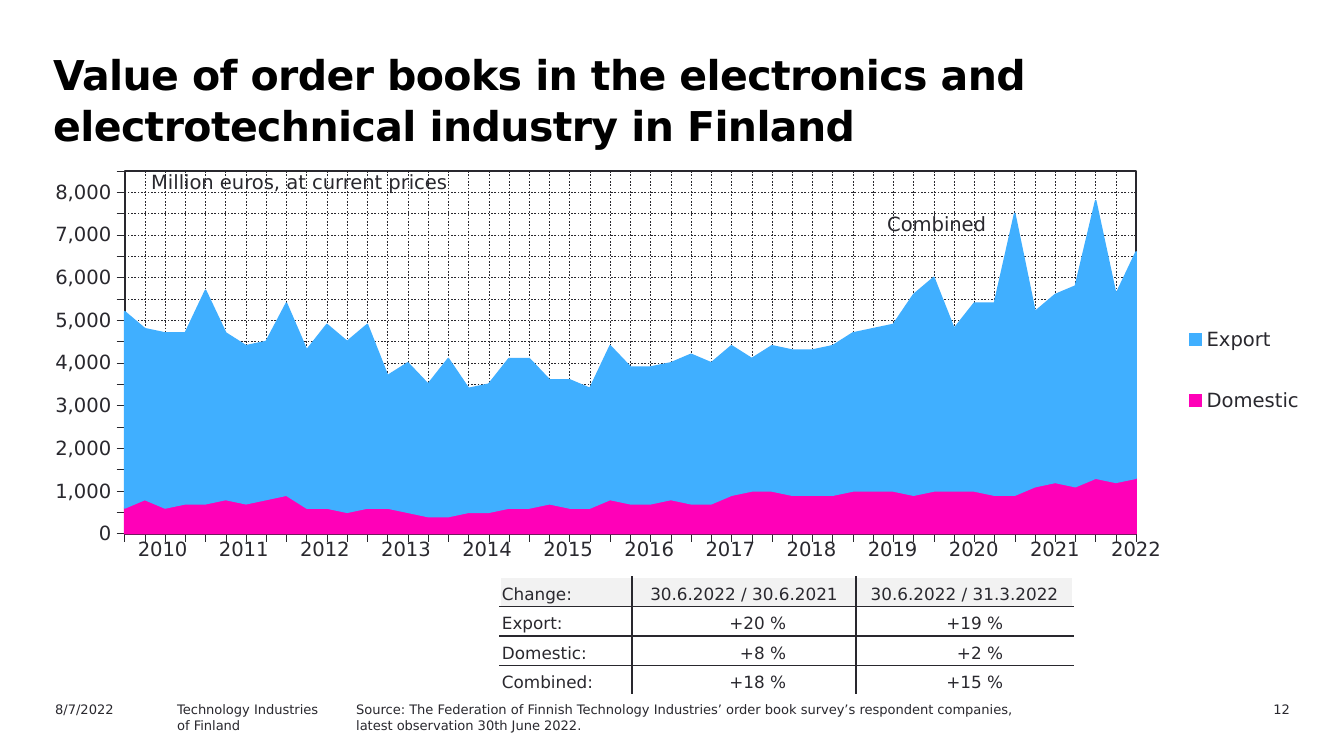
from lxml.etree import SubElement
from pptx import Presentation
from pptx.chart.data import CategoryChartData
from pptx.dml.color import RGBColor
from pptx.enum.chart import XL_CHART_TYPE, XL_LEGEND_POSITION, XL_TICK_LABEL_POSITION, XL_TICK_MARK
from pptx.enum.dml import MSO_LINE
from pptx.enum.text import MSO_ANCHOR, PP_ALIGN as Align
from pptx.oxml import parse_xml
from pptx.oxml.ns import nsdecls, qn
from pptx.util import Emu, Pt

# Content
TITLE = "Value of order books in the electronics and electrotechnical industry in Finland"
SOURCE = ("Source: The Federation of Finnish Technology Industries’ order book survey’s "
          "respondent companies, latest observation 30th June 2022.")
# lines, (left, top, width, height) in px, size, alignment, wrap
LABELS = [
    (["Million euros, at current prices"], (138, 163, 328, 36), 10.5, Align.LEFT, False),
    (["Combined"], (874, 205, 142, 36), 10.5, Align.LEFT, True),
    (["8/7/2022"], (42, 695, 134, 24), 7, Align.LEFT, True),
    (["Technology Industries", "of Finland"], (164, 695, 242, 24), 7, Align.LEFT, True),
    ([SOURCE], (343, 695, 710, 35), 7, Align.LEFT, True),
    (["12"], (1177, 695, 126, 24), 7, Align.RIGHT, True),
]
DOMESTIC = [
    600, 800, 600, 700, 700, 800, 700, 800, 900, 600, 600, 500, 600, 600, 500, 400, 400,
    500, 500, 600, 600, 700, 600, 600, 800, 700, 700, 800, 700, 700, 900, 1000, 1000, 900,
    900, 900, 1000, 1000, 1000, 900, 1000, 1000, 1000, 900, 900, 1100, 1200, 1100, 1300,
    1200, 1300]
EXPORT = [
    4600, 4000, 4100, 4000, 5000, 3900, 3700, 3700, 4500, 3700, 4300, 4000, 4300, 3100,
    3500, 3100, 3700, 2900, 3000, 3500, 3500, 2900, 3000, 2800, 3600, 3200, 3200, 3200,
    3500, 3300, 3500, 3100, 3400, 3400, 3400, 3500, 3700, 3800, 3900, 4700, 5000, 3800,
    4400, 4500, 6600, 4100, 4400, 4700, 6500, 4400, 5300]
YEARS = [str(year) for year in range(2010, 2023)]
CHANGES = [
    ["Change:", "30.6.2022 / 30.6.2021", "30.6.2022 / 31.3.2022"],
    ["Export:", "+20 %", "+19 %"],
    ["Domestic:", "+8 %", "+2 %"],
    ["Combined:", "+18 %", "+15 %"],
]

# Style
FONT = "DejaVu Sans"
BLACK = RGBColor(0x00, 0x00, 0x00)
INK = RGBColor(0x29, 0x28, 0x2E)
WHITE = RGBColor(0xFF, 0xFF, 0xFF)
GREY = RGBColor(0xF2, 0xF2, 0xF2)
PINK = RGBColor(0xFF, 0x00, 0xB8)
BLUE = RGBColor(0x40, 0xAF, 0xFF)
PLAIN_TABLE = "{2D5ABB26-0587-4C30-8999-92F81FD0307C}"


def px(value):
    return Emu(round(value * 914400 / 134.4))


def style_font(font, size, color=INK, bold=False):
    font.name, font.size, font.bold = FONT, Pt(size), bold
    font.color.rgb = color


def write(paragraph, text, size, align=Align.LEFT, color=INK, bold=False):
    paragraph.alignment = align
    run = paragraph.add_run()
    run.text = text
    style_font(run.font, size, color, bold)
    return run


def add_text(slide, lines, box, size, align=Align.LEFT, wrap=True):
    frame = slide.shapes.add_textbox(*map(px, box)).text_frame
    frame.word_wrap = wrap
    for index, line in enumerate(lines):
        paragraph = frame.add_paragraph() if index else frame.paragraphs[0]
        write(paragraph, line, size, align)
    return frame


def add_plain_table(slide, rows, left, top, widths, height):
    shape = slide.shapes.add_table(len(rows), len(widths), px(left), px(top),
                                   px(sum(widths)), px(height))
    table = shape.table
    table.first_row = table.horz_banding = False
    shape._element.find(".//" + qn("a:tableStyleId")).text = PLAIN_TABLE
    for column, width in zip(table.columns, widths):
        column.width = px(width)
    for row in table.rows:
        row.height = px(height / len(rows))
    return table


def set_borders(cell, colors):
    properties = cell._tc.get_or_add_tcPr()
    for index, (side, color) in enumerate(zip("LRTB", colors)):
        properties.insert(index, parse_xml(
            f'<a:ln{side} {nsdecls("a")} w="12700"><a:solidFill>'
            f'<a:srgbClr val="{color}"/></a:solidFill></a:ln{side}>'))


def set_layout(parent, position, inner=False):
    """Place a chart part by fractions of the chart: x, y, width, height."""
    for old in parent.findall(qn("c:layout")):
        parent.remove(old)
    layout = parse_xml(f'<c:layout {nsdecls("c")}><c:manualLayout/></c:layout>')
    manual = layout[0]
    if inner:
        SubElement(manual, qn("c:layoutTarget")).set("val", "inner")
    for name in ("xMode", "yMode"):
        SubElement(manual, qn(f"c:{name}")).set("val", "edge")
    for name, value in zip("xywh", position):
        SubElement(manual, qn(f"c:{name}")).set("val", str(value))
    parent.insert(0 if inner else 1, layout)


def style_axis(axis):
    axis.major_tick_mark = XL_TICK_MARK.OUTSIDE
    axis.minor_tick_mark = XL_TICK_MARK.NONE
    axis.format.line.color.rgb = INK
    axis.format.line.width = Pt(0.22)
    axis.has_major_gridlines = True
    grid = axis.major_gridlines.format.line
    grid.color.rgb, grid.width, grid.dash_style = INK, Pt(0.25), MSO_LINE.DASH


def add_order_chart(slide):
    data = CategoryChartData(number_format="#,##0")
    data.categories = [str(quarter + 1) for quarter in range(len(EXPORT))]
    data.add_series("Domestic", DOMESTIC)
    data.add_series("Export", EXPORT)
    chart = slide.shapes.add_chart(XL_CHART_TYPE.AREA_STACKED, px(27), px(159),
                                   px(1302), px(410), data).chart
    style_font(chart.font, 10.5)
    chart.has_title = False
    for series, color in zip(chart.plots[0].series, (PINK, BLUE)):
        series.format.fill.solid()
        series.format.fill.fore_color.rgb = color
        series.format.line.color.rgb = color
        series.format.line.width = Pt(0.88)

    # Axes
    quarters, euros = chart.category_axis, chart.value_axis
    style_axis(quarters)
    style_axis(euros)
    quarters.tick_label_position = XL_TICK_LABEL_POSITION.NONE
    euros.minimum_scale, euros.maximum_scale, euros.major_unit = 0, 8500, 500
    euros.tick_labels.number_format = "#,##0"
    euros.tick_labels.number_format_is_linked = False
    style_font(euros.tick_labels.font, 10.5)
    euros._element.find(qn("c:crossBetween")).set("val", "midCat")

    # Plot frame and legend
    plot_area = chart._chartSpace.chart.plotArea
    set_layout(plot_area, (0.075, 0.029, 0.777, 0.885), inner=True)
    plot_area.append(parse_xml(
        f'<c:spPr {nsdecls("c", "a")}><a:noFill/><a:ln w="12700"><a:solidFill>'
        f'<a:srgbClr val="{INK}"/></a:solidFill></a:ln></c:spPr>'))
    chart.has_legend = True
    chart.legend.position = XL_LEGEND_POSITION.RIGHT
    chart.legend.include_in_layout = False
    style_font(chart.legend.font, 10.5)
    set_layout(chart.legend._element, (0.88, 0.32, 0.11, 0.39))


def add_change_table(slide):
    table = add_plain_table(slide, CHANGES, 500, 577, [132, 224, 217], 118)
    last_row, last_column = len(CHANGES) - 1, len(CHANGES[0]) - 1
    for r, row in enumerate(CHANGES):
        for c, text in enumerate(row):
            cell = table.cell(r, c)
            is_value = r > 0 and c > 0
            cell.vertical_anchor = MSO_ANCHOR.BOTTOM
            cell.margin_left = cell.margin_top = cell.margin_bottom = px(2)
            cell.margin_right = px(70 if is_value else 2)
            cell.fill.solid()
            cell.fill.fore_color.rgb = WHITE if r else GREY
            align = Align.RIGHT if is_value else Align.CENTER if c else Align.LEFT
            write(cell.text_frame.paragraphs[0], text, 9, align)
            outer = (c == 0, c == last_column, r == 0, r == last_row)
            set_borders(cell, [WHITE if edge else INK for edge in outer])


def add_year_labels(slide):
    table = add_plain_table(slide, [YEARS], 122, 532, [1055 / len(YEARS)] * len(YEARS), 42)
    for cell, year in zip(table.rows[0].cells, YEARS):
        cell.fill.background()
        write(cell.text_frame.paragraphs[0], year, 10.5, Align.CENTER)


def main():
    presentation = Presentation()
    presentation.slide_width, presentation.slide_height = px(1344), px(756)
    slide = presentation.slides.add_slide(presentation.slide_layouts[6])

    # Title
    frame = slide.shapes.add_textbox(px(40), px(42), px(1173), px(95)).text_frame
    frame.word_wrap = True
    frame.paragraphs[0].line_spacing = Pt(27)
    run = write(frame.paragraphs[0], TITLE, 22, color=BLACK, bold=True)
    run.font._element.set("spc", "-30")

    # Chart, tables, then labels and footer
    add_order_chart(slide)
    add_change_table(slide)
    add_year_labels(slide)
    for label in LABELS:
        add_text(slide, *label)
    presentation.save("out.pptx")


if __name__ == "__main__":
    main()
